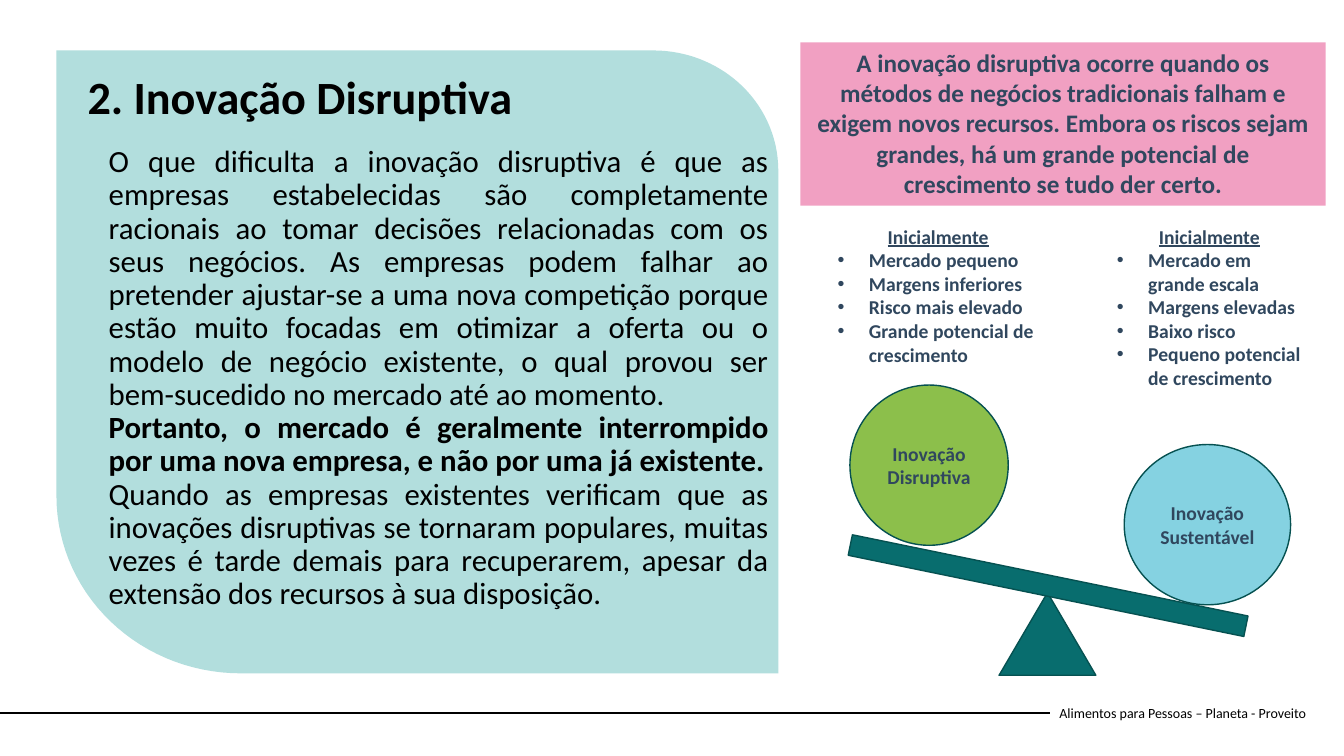
from math import cos, radians, sin

from lxml.etree import SubElement
from pptx import Presentation
from pptx.dml.color import RGBColor
from pptx.enum.shapes import MSO_CONNECTOR, MSO_SHAPE
from pptx.enum.text import MSO_ANCHOR, MSO_AUTO_SIZE, PP_ALIGN
from pptx.oxml.ns import qn
from pptx.util import Inches, Pt

BLACK = RGBColor(0x00, 0x00, 0x00)
SLATE = RGBColor(0x30, 0x47, 0x5E)
MINT = RGBColor(0xB2, 0xDE, 0xDD)
TEAL = RGBColor(0x08, 0x6D, 0x6E)
DARK_TEAL = RGBColor(0x06, 0x51, 0x51)
GREEN = RGBColor(0x8C, 0xBF, 0x4B)
BLUE = RGBColor(0x85, 0xD2, 0xE1)
PINK = RGBColor(0xF1, 0xA0, 0xC2)

deck = Presentation()
deck.slide_width, deck.slide_height = Inches(13.33), Inches(7.5)
page = deck.slides.add_slide(deck.slide_layouts[6])
shapes = page.shapes

# The grid has 100 columns and 100 rows.
COLUMN, ROW = deck.slide_width / 100, deck.slide_height / 100


def place(left, top, width, height):
    """Turn columns and rows of the grid into slide lengths."""
    return [round(n * unit) for n, unit in
            zip((left, top, width, height), (COLUMN, ROW, COLUMN, ROW))]


def write(shape, entries, size, color, frame_format=None):
    """Fill a shape with (text, font format, paragraph format) entries."""
    frame = shape.text_frame
    frame.word_wrap = True
    for name, value in (frame_format or {}).items():
        setattr(frame, name, value)
    for index, (text, font_format, para_format) in enumerate(entries):
        para = frame.paragraphs[0] if index == 0 else frame.add_paragraph()
        for name, value in para_format.items():
            setattr(para, name, value)
        span = para.add_run()
        span.text = text
        span.font.color.rgb = color
        for name, value in {"name": "Calibri", "size": Pt(size), **font_format}.items():
            setattr(span.font, name, value)


BOLD = {"bold": True}
CENTERED = {"alignment": PP_ALIGN.CENTER}
JUSTIFIED = {"alignment": PP_ALIGN.JUSTIFY, "line_spacing": 0.9}
MIDDLE = {"vertical_anchor": MSO_ANCHOR.MIDDLE}
GROWING = {"auto_size": MSO_AUTO_SIZE.SHAPE_TO_FIT_TEXT}

# Footer
footer = shapes.add_textbox(*place(78.09, 91.6, 20.48, 5.33))
write(footer, [("Alimentos para Pessoas – Planeta - Proveito", {}, {})], 10, BLACK, MIDDLE)
rule_y = footer.top + footer.height // 2
rule = shapes.add_connector(MSO_CONNECTOR.STRAIGHT, 0, rule_y, footer.left, rule_y)
rule.end_connect(footer, 1)
rule.line.color.rgb = BLACK
rule.line.width = Pt(1.5)
SubElement(rule._element.spPr, qn("a:effectLst"))

# Panel with two rounded corners
left, top, right, bottom = place(4.2, 6.67, 57.91, 89.07)
outline = []
for column, row, radius_x, radius_y, start, corner in (
    (17.93, 65.6, 13.73, 23.47, 90, [(left, top)]),
    (48.61, 22.54, 9.3, 15.87, 270, []),
):
    x, y, radius_x, radius_y = place(column, row, radius_x, radius_y)
    for angle in range(start, start + 91, 3):
        outline.append((x + radius_x * cos(radians(angle)), y + radius_y * sin(radians(angle))))
    outline += corner
builder = shapes.build_freeform(right, bottom)
builder.add_line_segments(outline, close=True)
panel = builder.convert_to_shape()
panel.shadow.inherit = False
panel.fill.solid()
panel.fill.fore_color.rgb = MINT
panel.line.fill.background()

title = shapes.add_textbox(*place(5.78, 9.2, 40.96, 14.53))
write(title, [("2. Inovação Disruptiva", BOLD, {"line_spacing": 0.9, "space_before": Pt(10)})],
      33, BLACK)

body = shapes.add_textbox(*place(7.35, 18.67, 50.56, 63.2))
write(body, [
    ("O que dificulta a inovação disruptiva é que as empresas estabelecidas são "
     "completamente racionais ao tomar decisões relacionadas com os seus negócios. "
     "As empresas podem falhar ao pretender ajustar-se a uma nova competição porque "
     "estão muito focadas em otimizar a oferta ou o modelo de negócio existente, o "
     "qual provou ser bem-sucedido no mercado até ao momento.", {}, JUSTIFIED),
    ("Portanto, o mercado é geralmente interrompido por uma nova empresa, e não por "
     "uma já existente.", BOLD, JUSTIFIED),
    ("Quando as empresas existentes verificam que as inovações disruptivas se tornaram "
     "populares, muitas vezes é tarde demais para recuperarem, apesar da extensão dos "
     "recursos à sua disposição.", {}, JUSTIFIED),
], 22, BLACK)

# Seesaw with its two weights, then the callout
CALLOUT = ("A inovação disruptiva ocorre quando os métodos de negócios tradicionais falham e "
           "exigem novos recursos. Embora os riscos sejam grandes, há um grande potencial de "
           "crescimento se tudo der certo.")
for kind, cell, rotation, fill, edge, text, size, frame_format in (
    (MSO_SHAPE.ISOSCELES_TRIANGLE, (74.34, 78.4, 7.2, 10.93), 0, TEAL, DARK_TEAL, "", 14, {}),
    (MSO_SHAPE.MATH_MINUS, (57.54, 71.6, 40.89, 11.73), 11.6, TEAL, DARK_TEAL, "", 14, {}),
    (MSO_SHAPE.FLOWCHART_CONNECTOR, (63.24, 50.93, 11.78, 21.2), 0, GREEN, DARK_TEAL,
     "Inovação Disruptiva", 14, MIDDLE),
    (MSO_SHAPE.FLOWCHART_CONNECTOR, (83.65, 58.8, 12.38, 21.2), 0, BLUE, DARK_TEAL,
     "Inovação Sustentável", 14, MIDDLE),
    (MSO_SHAPE.RECTANGLE, (59.56, 5.6, 39.08, 21.6), 0, PINK, None, CALLOUT, 18,
     {"vertical_anchor": MSO_ANCHOR.TOP, **GROWING}),
):
    shape = shapes.add_shape(kind, *place(*cell))
    shape.shadow.inherit = False
    shape.rotation = rotation
    shape.fill.solid()
    shape.fill.fore_color.rgb = fill
    if edge:
        shape.line.color.rgb = edge
        shape.line.width = Pt(1)
    else:
        shape.line.fill.background()
    if text:
        write(shape, [(text, BOLD, CENTERED)], size, SLATE, frame_format)

# Bulleted lists above the weights
INDENT = Inches(0.31)
for cell, items in (
    ((82.37, 29.07, 15.23, 23.33),
     ("Mercado em grande escala", "Margens elevadas", "Baixo risco",
      "Pequeno potencial de crescimento")),
    ((61.59, 29.07, 16.43, 20.13),
     ("Mercado pequeno", "Margens inferiores", "Risco mais elevado",
      "Grande potencial de crescimento")),
):
    box = shapes.add_textbox(*place(*cell))
    heading = ("Inicialmente", {"bold": True, "underline": True}, CENTERED)
    write(box, [heading] + [(item, BOLD, {}) for item in items], 14, SLATE, GROWING)
    for para in box.text_frame.paragraphs[1:]:
        properties = para._p.get_or_add_pPr()
        properties.set("marL", str(INDENT))
        properties.set("indent", str(-INDENT))
        SubElement(properties, qn("a:buFont"), typeface="Arial")
        SubElement(properties, qn("a:buChar"), char="•")

deck.save("out.pptx")
